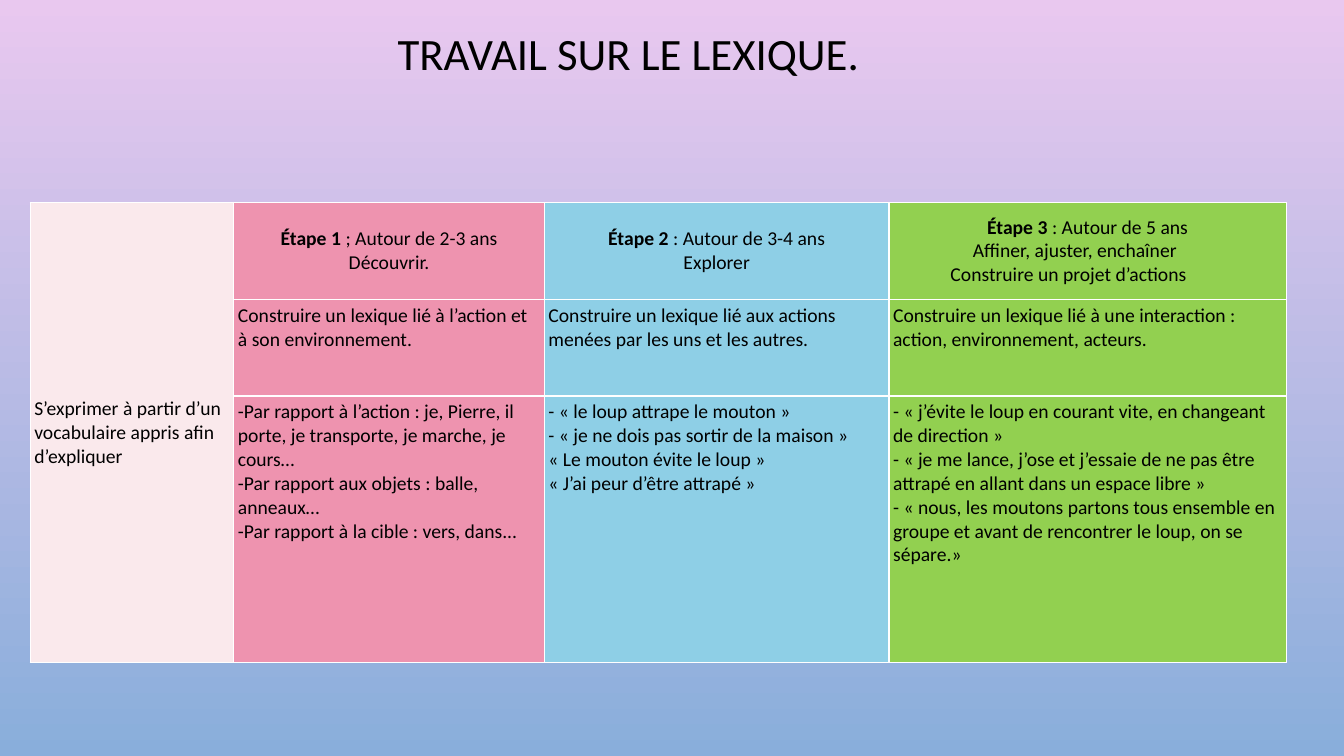
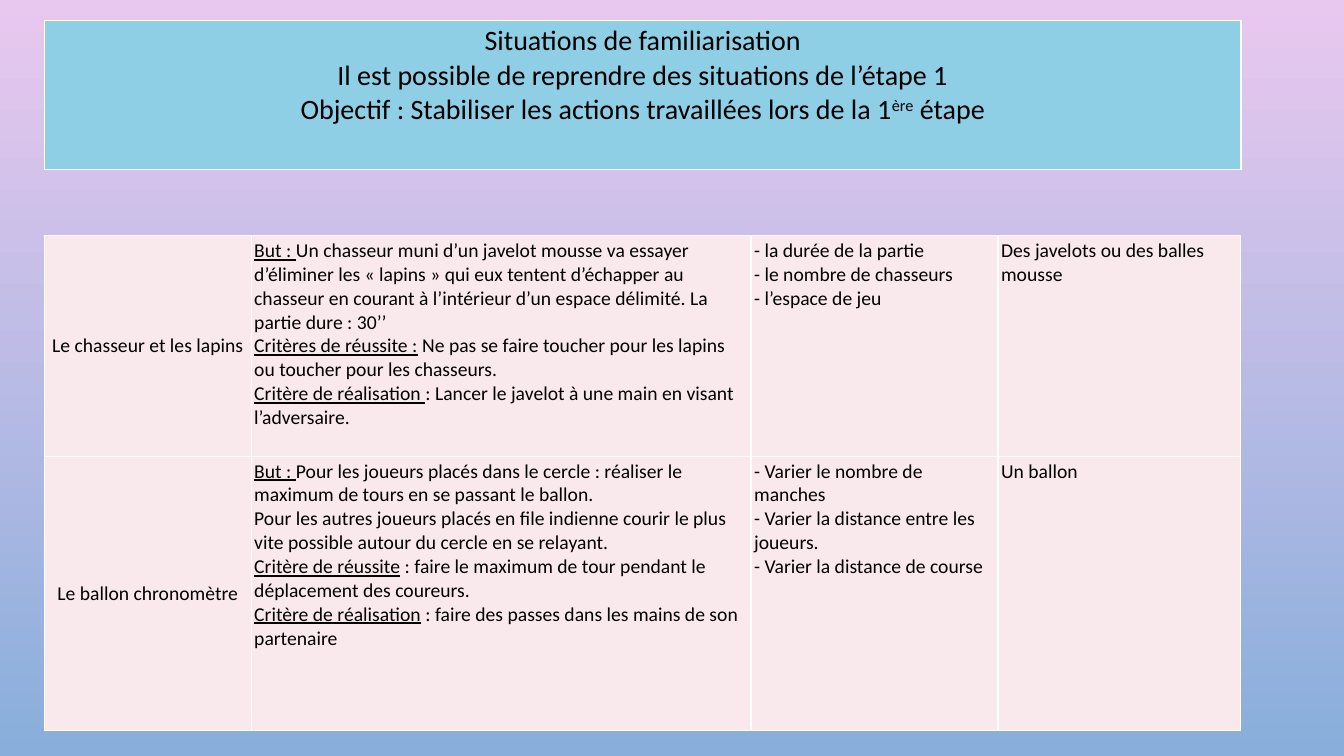
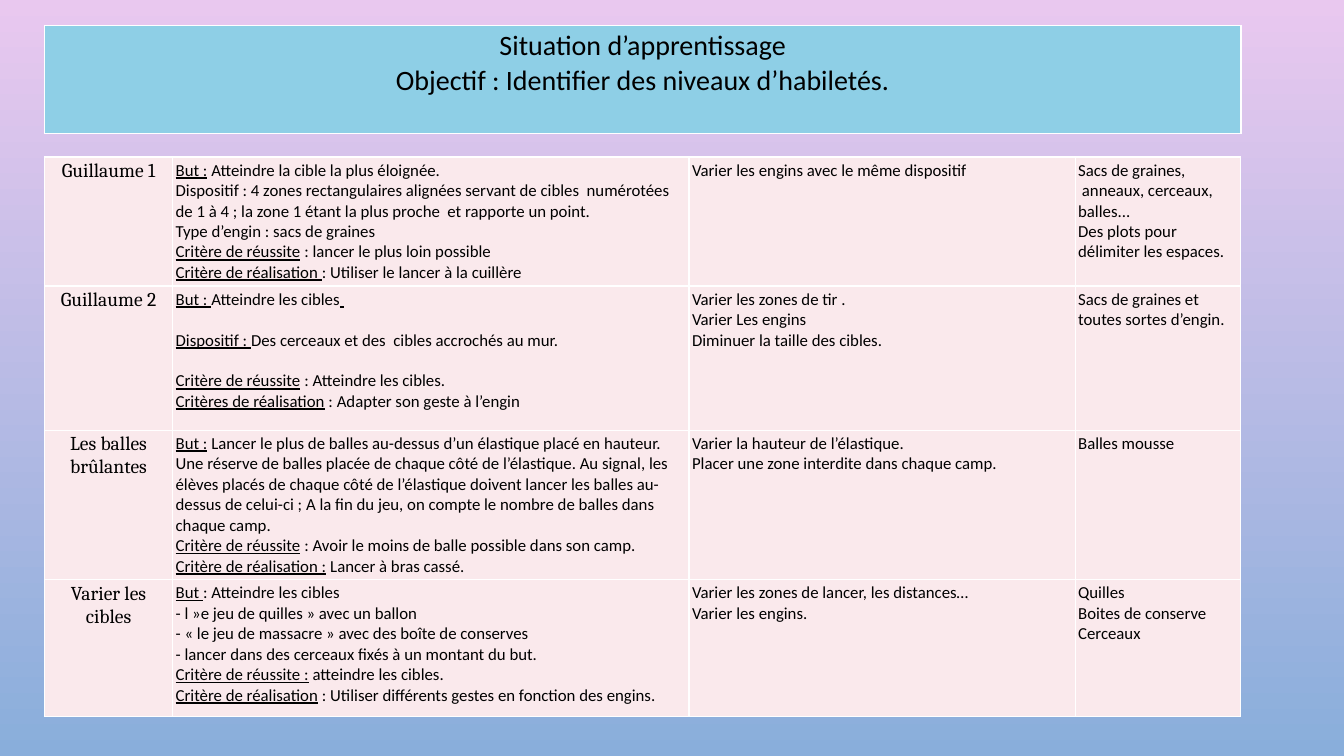
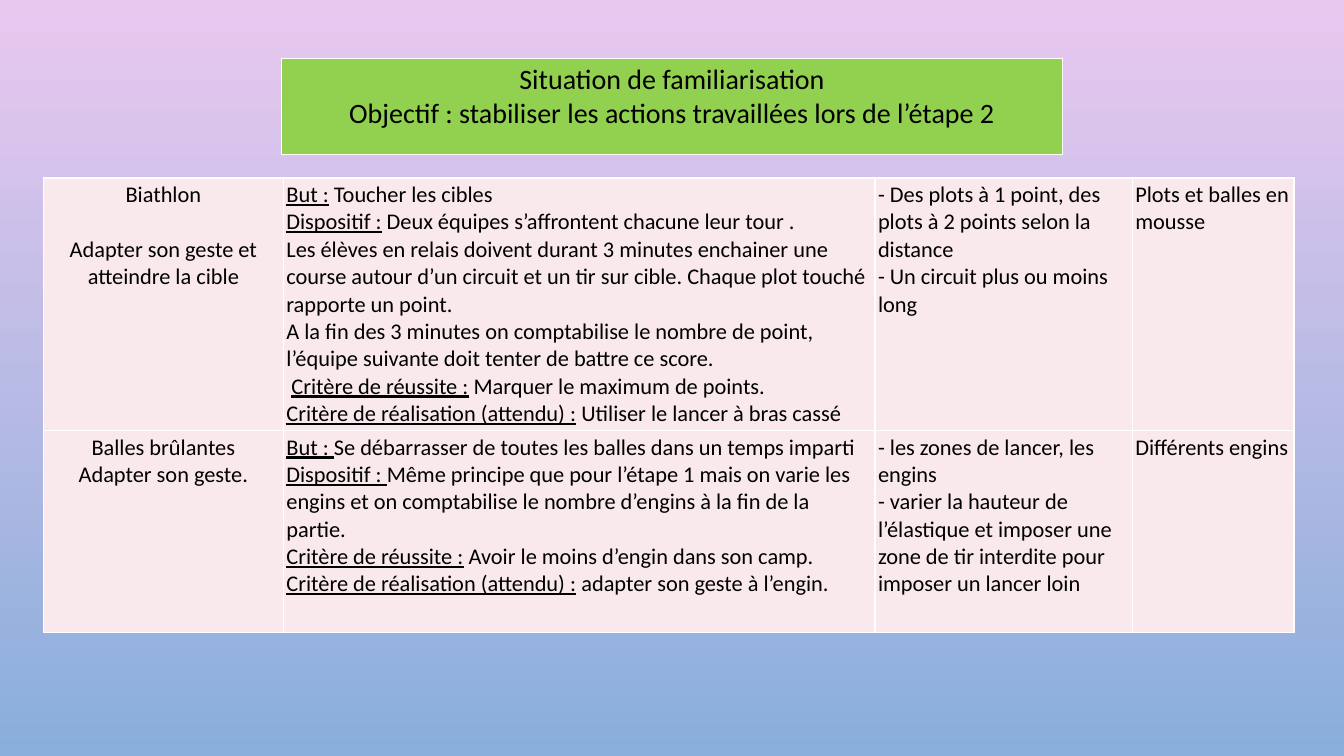
"""Build four slides on vocabulary and throwing games for nursery school."""
import pptx
import pptx.util
import pptx.dml.color
import pptx.enum.text
import pptx.oxml
import pptx.oxml.ns

Pt = pptx.util.Pt
rgb = pptx.dml.color.RGBColor.from_string
PP_ALIGN = pptx.enum.text.PP_ALIGN
ANCHOR = pptx.enum.text.MSO_ANCHOR

BLACK, WHITE = "000000", "FFFFFF"
PALE, PINK, BLUE, GREEN = "FAE9EC", "EE93AF", "8ECFE6", "92D050"
SKY_TOP, SKY_BOTTOM = "E9C8EF", "89AEDB"
LINE_HEIGHT = 1.22
BORDER = (
    '<a:{tag} {ns} w="12700"><a:solidFill><a:srgbClr val="{color}"/></a:solidFill></a:{tag}>'
)


def add_grid(s, left, top, widths, heights):
    """Add a plain table with the given column widths and row heights."""
    frame = s.shapes.add_table(
        len(heights), len(widths), Pt(left), Pt(top), Pt(sum(widths)), Pt(sum(heights))
    )
    table = frame.table
    table.first_row = table.horz_banding = False
    for column, width in zip(table.columns, widths):
        column.width = Pt(width)
    for row, height in zip(table.rows, heights):
        row.height = Pt(height)
    return table


def write(cell, text, size, fill, inset=2.2, centred=False, middle=False, font="Calibri"):
    """Fill a cell and return its runs between underscores; ¶ opens a gap of one line."""
    tcPr = cell._tc.get_or_add_tcPr()
    for i, tag in enumerate(("lnL", "lnR", "lnT", "lnB")):
        xml = BORDER.format(tag=tag, ns=pptx.oxml.ns.nsdecls("a"), color=WHITE)
        tcPr.insert(i, pptx.oxml.parse_xml(xml))
    cell.fill.solid()
    cell.fill.fore_color.rgb = rgb(fill)
    cell.margin_left = cell.margin_right = cell.margin_top = cell.margin_bottom = Pt(inset)
    cell.vertical_anchor = ANCHOR.MIDDLE if middle else ANCHOR.TOP
    tf = cell.text_frame
    tf.text = text
    marked = []
    for p in tf.paragraphs:
        p.alignment = PP_ALIGN.CENTER if centred else PP_ALIGN.LEFT
        if p.text.startswith("¶"):
            p.space_before = Pt(round(size * LINE_HEIGHT, 1))
        pieces = p.text.lstrip("¶").split("_")
        p.text = pieces[0]
        for i, piece in enumerate(pieces[1:], 1):
            if piece:
                r = p.add_run()
                r.text = piece
                if i % 2:
                    marked.append(r)
        for r in p.runs:
            r.font.name = font
            r.font.size = Pt(size)
            r.font.color.rgb = rgb(BLACK)
    return marked


prs = pptx.Presentation()
prs.slide_width, prs.slide_height = Pt(960), Pt(540)

sky = prs.slide_master.background.fill
sky.gradient()
sky.gradient_angle = 270
for stop, position, color in zip(sky.gradient_stops, (0, 1), (SKY_TOP, SKY_BOTTOM)):
    stop.position = position
    stop.color.rgb = rgb(color)

s = prs.slides.add_slide(prs.slide_layouts[5])
title = s.shapes.title
title.left, title.top, title.width, title.height = Pt(50), Pt(19.4), Pt(798), Pt(114.5)
tf = title.text_frame
tf.text = "TRAVAIL SUR LE LEXIQUE."
tf.word_wrap = True
tf.auto_size = pptx.enum.text.MSO_AUTO_SIZE.NONE
tf.vertical_anchor = ANCHOR.TOP
p = tf.paragraphs[0]
p.alignment = PP_ALIGN.CENTER
p.line_spacing = 0.9
r = p.runs[0]
r.font.name = "Calibri"
r.font.size = Pt(32)
r.font.color.rgb = rgb(BLACK)

stages = [
    (
        PINK,
        "_Étape 1 _; Autour de 2-3 ans\nDécouvrir.",
        "Construire un lexique lié à l’action et à son environnement.",
        "-Par rapport à l’action : je, Pierre, il porte, je transporte, je marche, je cours…\n"
        "-Par rapport aux objets : balle, anneaux…\n"
        "-Par rapport à la cible : vers, dans...",
    ),
    (
        BLUE,
        "_Étape 2 _: Autour de 3-4 ans\nExplorer",
        "Construire un lexique lié aux actions menées par les uns et les autres.",
        "- « le loup attrape le mouton »\n"
        "- « je ne dois pas sortir de la maison »\n"
        "« Le mouton évite le loup »\n"
        "« J’ai peur d’être attrapé »",
    ),
    (
        GREEN,
        "_Étape 3 _: Autour de 5 ans\nAffiner, ajuster, enchaîner\nConstruire un projet d’actions",
        "Construire un lexique lié à une interaction : action, environnement, acteurs.",
        "- « j’évite le loup en courant vite, en changeant de direction »\n"
        "- « je me lance, j’ose et j’essaie de ne pas être attrapé en allant dans un espace libre »\n"
        "- « nous, les moutons partons tous ensemble en groupe et avant de rencontrer le loup, "
        "on se sépare.»",
    ),
]
table = add_grid(s, 21.6, 144.9, [145.5, 221.8, 246.2, 283.7], [69, 69, 190.5])
table.cell(0, 0).merge(table.cell(2, 0))
write(
    table.cell(0, 0),
    "S’exprimer à partir d’un vocabulaire appris afin d’expliquer",
    14, PALE, inset=2.9, middle=True,
)
for col, (fill, *texts) in enumerate(stages, 1):
    for row, text in enumerate(texts):
        head = row == 0
        for r in write(table.cell(row, col), text, 14, fill, 2.9, centred=head, middle=head):
            r.font.bold = True
for p, indent in zip(table.cell(0, 3).text_frame.paragraphs[1:], (57, 41)):
    p.alignment = PP_ALIGN.LEFT
    p._p.get_or_add_pPr().set("marL", str(Pt(indent)))

games = [
    {
        "banner": (31.8, 14.4, 854.6, 106.6, BLUE),
        "heading": "Situations de familiarisation\n"
        "Il est possible de reprendre des situations de l’étape 1\n"
        "Objectif : Stabiliser les actions travaillées lors de la 1_ère_ étape",
        "at": (31.8, 168.4),
        "widths": [147.6, 357.1, 176.4, 173.5],
        "heights": [157.6, 195.8],
        "size": 14,
        "label": {"size": 14, "middle": True},
        "rows": [
            (
                "Le chasseur et les lapins",
                "_But : _Un chasseur muni d’un javelot mousse va essayer d’éliminer les « lapins » "
                "qui eux tentent d’échapper au chasseur en courant à l’intérieur d’un espace "
                "délimité. La partie dure : 30’’\n"
                "_Critères de réussite :_ Ne pas se faire toucher pour les lapins ou toucher pour "
                "les chasseurs.\n"
                "_Critère de réalisation _: Lancer le javelot à une main en visant l’adversaire.",
                "- la durée de la partie\n- le nombre de chasseurs\n- l’espace de jeu",
                "Des javelots ou des balles mousse",
            ),
            (
                "Le ballon chronomètre",
                "_But : _Pour les joueurs placés dans le cercle : réaliser le maximum de tours en "
                "se passant le ballon.\n"
                "Pour les autres joueurs placés en file indienne courir le plus vite possible "
                "autour du cercle en se relayant.\n"
                "_Critère de réussite_ : faire le maximum de tour pendant le déplacement des "
                "coureurs.\n"
                "_Critère de réalisation_ : faire des passes dans les mains de son partenaire",
                "- Varier le nombre de manches\n- Varier la distance entre les joueurs.\n"
                "- Varier la distance de course",
                "Un ballon",
            ),
        ],
    },
    {
        "banner": (31.8, 18, 854.6, 77.4, BLUE),
        "heading": "Situation d’apprentissage\nObjectif : Identifier des niveaux d’habiletés.",
        "at": (31.8, 112.2),
        "widths": [91.5, 368.9, 275.8, 118.4],
        "heights": [90.7, 103, 105, 97.5],
        "size": 12,
        "label": {"size": 14, "font": "Cambria"},
        "rows": [
            (
                "Guillaume 1",
                "_But :_ Atteindre la cible la plus éloignée.\n"
                "Dispositif : 4 zones rectangulaires alignées servant de cibles  numérotées de 1 "
                "à 4 ; la zone 1 étant la plus proche  et rapporte un point.\n"
                "Type d’engin : sacs de graines\n"
                "_Critère de réussite_ : lancer le plus loin possible\n"
                "_Critère de réalisation _: Utiliser le lancer à la cuillère",
                "Varier les engins avec le même dispositif",
                "Sacs de graines,\n anneaux, cerceaux, balles...\n"
                "Des plots pour délimiter les espaces.",
            ),
            (
                "Guillaume 2",
                "_But : _Atteindre les cibles_ _\n"
                "¶_Dispositif : _Des cerceaux et des  cibles accrochés au mur.\n"
                "¶_Critère de réussite_ : Atteindre les cibles.\n"
                "_Critères de réalisation_ : Adapter son geste à l’engin",
                "Varier les zones de tir .\nVarier Les engins\nDiminuer la taille des cibles.",
                "Sacs de graines et toutes sortes d’engin.",
            ),
            (
                "Les balles brûlantes",
                "_But :_ Lancer le plus de balles au-dessus d’un élastique placé en hauteur.\n"
                "Une réserve de balles placée de chaque côté de l’élastique. Au signal, les élèves "
                "placés de chaque côté de l’élastique doivent lancer les balles au-dessus de "
                "celui-ci ; A la fin du jeu, on compte le nombre de balles dans chaque camp.\n"
                "_Critère de réussite_ : Avoir le moins de balle possible dans son camp.\n"
                "_Critère de réalisation :_ Lancer à bras cassé.",
                "Varier la hauteur de l’élastique.\nPlacer une zone interdite dans chaque camp.",
                "Balles mousse",
            ),
            (
                "Varier les cibles",
                "_But _: Atteindre les cibles\n"
                "- l »e jeu de quilles » avec un ballon\n"
                "- « le jeu de massacre » avec des boîte de conserves\n"
                "- lancer dans des cerceaux fixés à un montant du but.\n"
                "_Critère de réussite :_ atteindre les cibles.\n"
                "_Critère de réalisation_ : Utiliser différents gestes en fonction des engins.",
                "Varier les zones de lancer, les distances…\nVarier les engins.",
                "Quilles\nBoites de conserve\nCerceaux",
            ),
        ],
    },
    {
        "banner": (201, 41.7, 558, 68.5, GREEN),
        "heading": "Situation de familiarisation\n"
        "Objectif : stabiliser les actions travaillées lors de l’étape 2",
        "at": (31, 127.2),
        "widths": [171.4, 422.6, 183.8, 115.5],
        "heights": [177.5, 144],
        "size": 16,
        "label": {"size": 16},
        "rows": [
            (
                "Biathlon\n¶Adapter son geste et atteindre la cible",
                "_But :_ Toucher les cibles\n"
                "_Dispositif :_ Deux équipes s’affrontent chacune leur tour .\n"
                "Les élèves en relais doivent durant 3 minutes enchainer une course autour d’un "
                "circuit et un tir sur cible. Chaque plot touché rapporte un point.\n"
                "A la fin des 3 minutes on comptabilise le nombre de point, l’équipe suivante doit "
                "tenter de battre ce score.\n"
                " _Critère de réussite :_ Marquer le maximum de points.\n"
                "_Critère de réalisation (attendu) :_ Utiliser le lancer à bras cassé",
                "- Des plots à 1 point, des plots à 2 points selon la distance\n"
                "- Un circuit plus ou moins long",
                "Plots et balles en mousse",
            ),
            (
                "Balles brûlantes\nAdapter son geste.",
                "_But : _Se débarrasser de toutes les balles dans un temps imparti\n"
                "_Dispositif : _Même principe que pour l’étape 1 mais on varie les engins et on "
                "comptabilise le nombre d’engins à la fin de la partie.\n"
                "_Critère de réussite :_ Avoir le moins d’engin dans son camp.\n"
                "_Critère de réalisation (attendu) :_ adapter son geste à l’engin.",
                "- les zones de lancer, les engins\n"
                "- varier la hauteur de l’élastique et imposer une zone de tir interdite pour "
                "imposer un lancer loin",
                "Différents engins",
            ),
        ],
    },
]
for game in games:
    s = prs.slides.add_slide(prs.slide_layouts[6])
    left, top, width, height, fill = game["banner"]
    banner = add_grid(s, left, top, [width], [height])
    for r in write(banner.cell(0, 0), game["heading"], 20, fill, 2.9, centred=True):
        r._r.get_or_add_rPr().set("baseline", "30000")

    table = add_grid(s, *game["at"], game["widths"], game["heights"])
    for row, (label, *texts) in enumerate(game["rows"]):
        write(table.cell(row, 0), label, fill=PALE, centred=True, **game["label"])
        for col, text in enumerate(texts, 1):
            for r in write(table.cell(row, col), text, game["size"], PALE):
                r.font.underline = True

prs.save("out.pptx")
